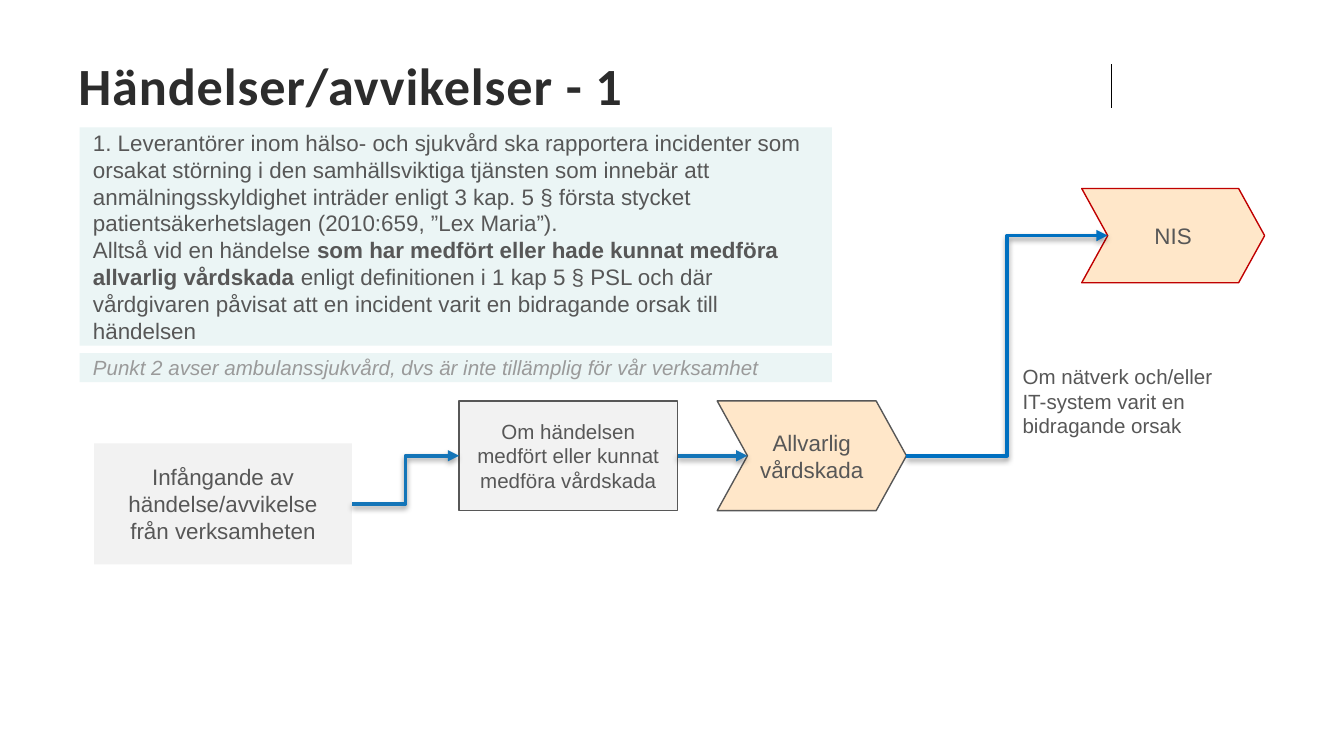
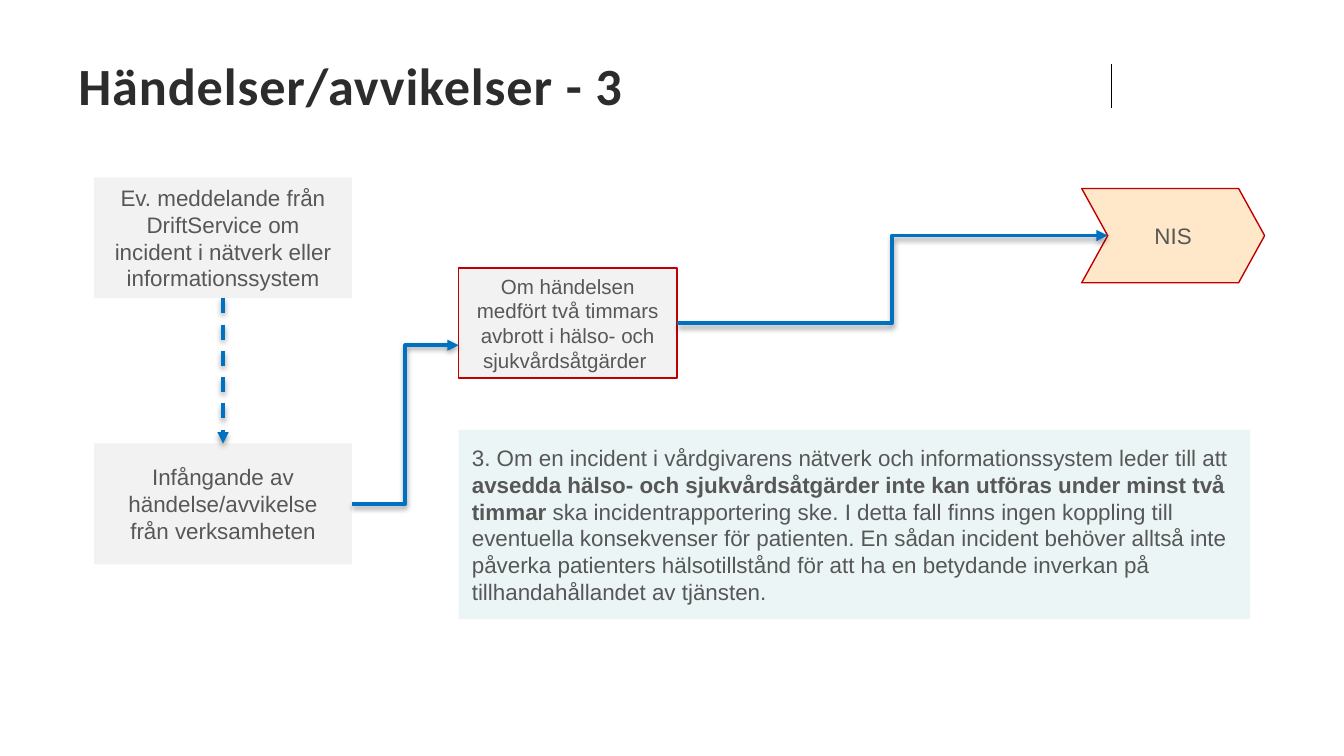
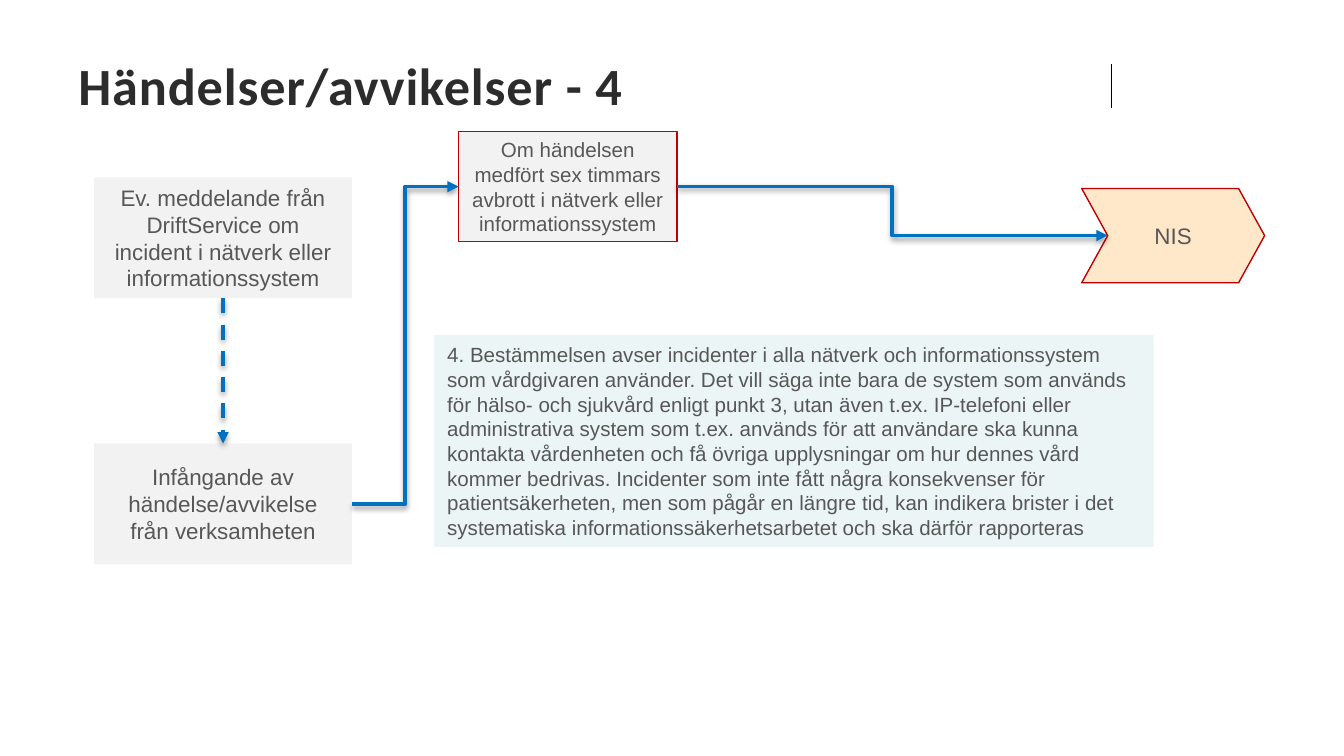
from lxml import etree
from pptx import Presentation
from pptx.dml.color import RGBColor
from pptx.enum import dml, shapes, text
from pptx.oxml import ns
from pptx.util import Pt

COLORS = {
    "title": "2C2C2C", "text": "575757", "muted": "9A9A9A", "black": "000000",
    "step": "F2F2F2", "note": "EBF5F5", "outcome": "FFE7C9",
    "alert": "C00000", "flow": "0070C0", "flow_soft": "1475B8",
}
RECT = shapes.MSO_SHAPE.RECTANGLE
CHEVRON = shapes.MSO_SHAPE.CHEVRON
STRAIGHT = shapes.MSO_CONNECTOR.STRAIGHT
ELBOW = shapes.MSO_CONNECTOR.ELBOW
CENTER = text.PP_ALIGN.CENTER
LEFT = text.PP_ALIGN.LEFT


def put_text(slide, box, content, *, shape=None, fill=None, line=None, size=12,
             font="Arial", color="text", bold=False, italic=False, align=LEFT,
             anchor=text.MSO_ANCHOR.MIDDLE, inset=(7.2, 3.6), leading=None, spacing=None):
    """Place text in a box; pieces between ** marks are bold."""
    frame = [Pt(n) for n in box]
    if shape is None:
        block = slide.shapes.add_textbox(*frame)
    else:
        block = slide.shapes.add_shape(shape, *frame)
        block.shadow.inherit = False
        block.fill.solid()
        block.fill.fore_color.rgb = RGBColor.from_string(COLORS[fill])
        if shape == CHEVRON:
            block.adjustments[0] = 0.276
        if line:
            block.line.color.rgb = RGBColor.from_string(COLORS[line])
            block.line.width = Pt(0.75)
        else:
            block.line.fill.background()
    body = block.text_frame
    body.word_wrap = True
    body.vertical_anchor = anchor
    body.margin_left = body.margin_right = Pt(inset[0])
    body.margin_top = body.margin_bottom = Pt(inset[1])
    paragraph = body.paragraphs[0]
    paragraph.alignment = align
    if leading:
        paragraph.line_spacing = Pt(leading)
    for i, piece in enumerate(content.split("**")):
        for j, words in enumerate(piece.split("\n")):
            if j:
                paragraph.add_line_break()
            run = paragraph.add_run()
            run.text = words
            run.font.name = font
            run.font.size = Pt(size)
            run.font.bold = bold or i % 2 == 1
            run.font.italic = italic
            run.font.color.rgb = RGBColor.from_string(COLORS[color])
            if spacing:
                run.font._element.set("spc", str(round(spacing * 100)))
    return block


def put_line(slide, start, end, *, kind=STRAIGHT, color="flow", width=2, arrow=True, dash=False):
    """Draw a line; arrows get a head and a soft shadow."""
    link = slide.shapes.add_connector(kind, *[Pt(n) for n in (*start, *end)])
    link.line.color.rgb = RGBColor.from_string(COLORS[color])
    link.line.width = Pt(width)
    if dash:
        link.line.dash_style = dml.MSO_LINE.DASH
    properties = link._element.spPr
    effects = etree.SubElement(properties, ns.qn("a:effectLst"))
    if arrow:
        etree.SubElement(properties.find(ns.qn("a:ln")), ns.qn("a:tailEnd"), type="triangle")
        shadow = etree.SubElement(effects, ns.qn("a:outerShdw"), blurRad=str(Pt(3.1)),
                                  dist=str(Pt(1.6)), dir="5400000", rotWithShape="0")
        tint = etree.SubElement(shadow, ns.qn("a:srgbClr"), val=COLORS["black"])
        etree.SubElement(tint, ns.qn("a:alpha"), val="38000")
    return link


# Formats of the recurring parts
STEP = dict(shape=RECT, fill="step", align=CENTER)
NOTE = dict(shape=RECT, fill="note")
OUTCOME = dict(shape=CHEVRON, fill="outcome", align=CENTER, inset=(2.88, 2.88))

# Anchor points of the flow
capture_out = (188.6, 270)
nis_in = (593.4, 126.2)

deck = Presentation()
deck.slide_width, deck.slide_height = Pt(720), Pt(405)

# Shared parts: title, marker line, capture step and NIS outcome
pages, captures = [], []
for number in (1, 3, 4):
    page = deck.slides.add_slide(deck.slide_layouts[6])
    put_line(page, (595.5, 34.5), (595.5, 57.6), color="black", width=1, arrow=False)
    put_text(page, (42, 28, 510, 41), f"Händelser/avvikelser - {number}", size=28,
             font="Calibri", color="title", bold=True, inset=(0, 0), leading=27, spacing=0.5)
    captures.append(put_text(page, (50.4, 237.6, 138.2, 64.8),
                             "Infångande av händelse/avvikelse från verksamheten", **STEP))
    put_text(page, (579.5, 101, 98, 50.5), "NIS", line="alert", **OUTCOME)
    pages.append(page)
harm_page, care_page, network_page = pages

# Point 1: serious harm in care
put_text(harm_page, (42.7, 68.2, 403, 117),
         "1. Leverantörer inom hälso- och sjukvård ska rapportera incidenter som orsakat störning "
         "i den samhällsviktiga tjänsten som innebär att anmälningsskyldighet inträder enligt "
         "3 kap. 5 § första stycket patientsäkerhetslagen (2010:659, ”Lex Maria”).\n"
         "Alltså vid en händelse **som har medfört eller hade kunnat medföra allvarlig "
         "vårdskada** enligt definitionen i 1 kap 5 § PSL och där vårdgivaren påvisat att en "
         "incident varit en bidragande orsak till händelsen", **NOTE)
put_text(harm_page, (42.7, 189.2, 403, 15.6),
         "Punkt 2 avser ambulanssjukvård, dvs är inte tillämplig för vår verksamhet",
         size=11, color="muted", italic=True, **NOTE)
harm_check = put_text(harm_page, (246, 214.8, 117, 58.8),
                      "Om händelsen medfört eller kunnat medföra vårdskada",
                      size=11, line="text", **STEP)
put_text(harm_page, (384.2, 214.8, 101.4, 58.8), "Allvarlig vårdskada", line="text", **OUTCOME)
put_text(harm_page, (540.7, 191.5, 116.6, 47.5),
         "Om nätverk och/eller IT-system varit en bidragande orsak",
         size=11, anchor=text.MSO_ANCHOR.TOP)
put_line(harm_page, capture_out, (246, 244.2), kind=ELBOW, color="flow_soft")
put_line(harm_page, (363, 244.2), (400.4, 244.2), color="flow_soft").begin_connect(harm_check, 3)
put_line(harm_page, (485.6, 244.2), nis_in, kind=ELBOW)

# Points 3 and 4: a notice may precede the capture, an interruption leads to NIS
interruptions = [
    (care_page, captures[1], 143.5, 185,
     "Om händelsen medfört två timmars avbrott i hälso- och sjukvårdsåtgärder "),
    (network_page, captures[2], 70.5, 100,
     "Om händelsen medfört sex timmars avbrott i nätverk eller informationssystem"),
]
for page, capture, top, entry, condition in interruptions:
    notice = put_text(page, (50.4, 95, 138.2, 64.8),
                      "Ev. meddelande från DriftService om incident i nätverk eller "
                      "informationssystem", **STEP)
    put_text(page, (245.7, top, 117, 59), condition, size=11, line="alert", **STEP)
    warning = put_line(page, (119.5, 159.8), (119.5, 237.6), dash=True)
    warning.begin_connect(notice, 2)
    warning.end_connect(capture, 0)
    put_line(page, capture_out, (245.7, entry), kind=ELBOW)
    put_line(page, (362.7, top + 29.5), nis_in, kind=ELBOW)

# Explanations of points 3 and 4
put_text(care_page, (245.7, 230.3, 424, 101.4),
         "3. Om en incident i vårdgivarens nätverk och informationssystem leder till att "
         "**avsedda hälso- och sjukvårdsåtgärder inte kan utföras under minst två timmar** ska "
         "incidentrapportering ske. I detta fall finns ingen koppling till eventuella "
         "konsekvenser för patienten. En sådan incident behöver alltså inte påverka patienters "
         "hälsotillstånd för att ha en betydande inverkan på tillhandahållandet av tjänsten.",
         **NOTE)
put_text(network_page, (232.5, 179.4, 385.5, 113.6),
         "4. Bestämmelsen avser incidenter i alla nätverk och informationssystem som "
         "vårdgivaren använder. Det vill säga inte bara de system som används för hälso- och "
         "sjukvård enligt punkt 3, utan även t.ex. IP-telefoni eller administrativa system som "
         "t.ex. används för att användare ska kunna kontakta vårdenheten och få övriga "
         "upplysningar om hur dennes vård kommer bedrivas. Incidenter som inte fått några "
         "konsekvenser för patientsäkerheten, men som pågår en längre tid, kan indikera brister "
         "i det systematiska informationssäkerhetsarbetet och ska därför rapporteras",
         size=11, **NOTE)

deck.save("out.pptx")
